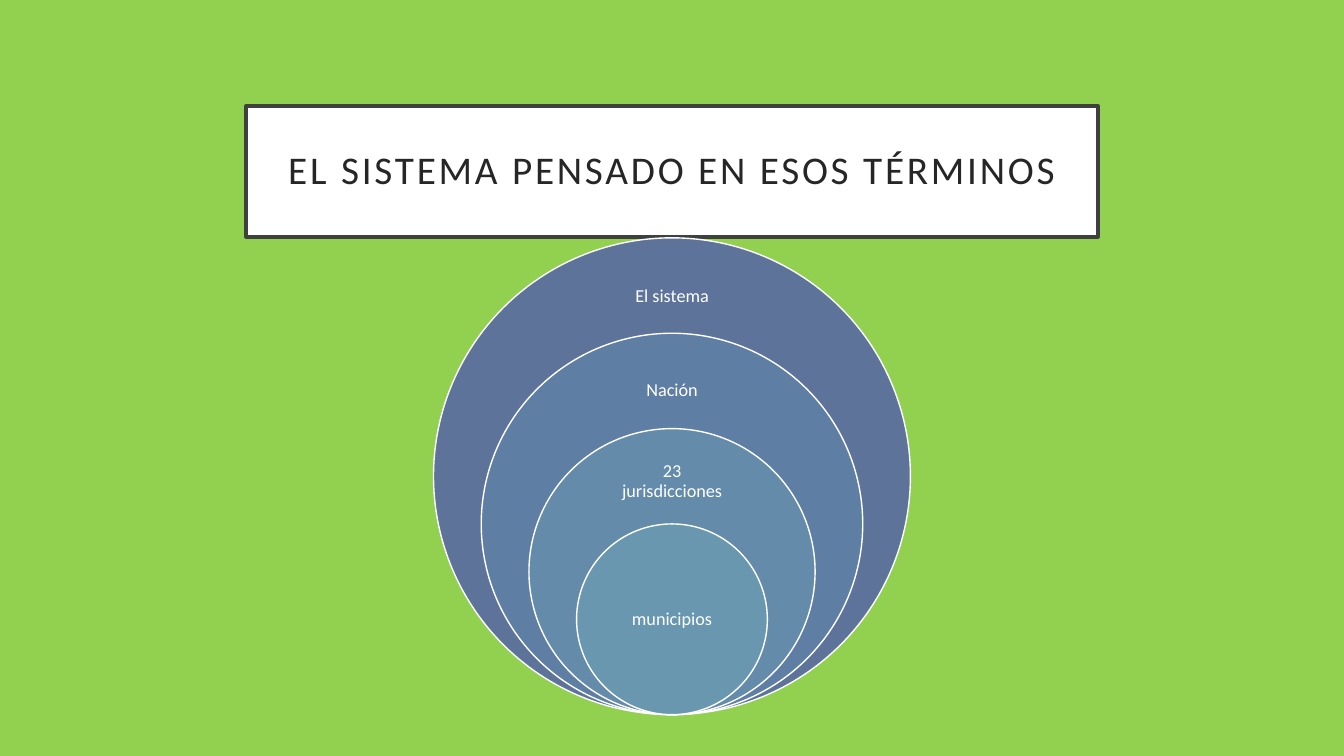
from pptx import Presentation
from pptx.dml.color import RGBColor
from pptx.enum.shapes import MSO_SHAPE
from pptx.enum.text import MSO_ANCHOR, PP_ALIGN
from pptx.util import Inches, Pt

COLORS = {
    "background": "92D050", "white": "FFFFFF", "frame": "404040", "title": "262626",
    "sistema": "5D739A", "nacion": "5F7EA3", "jurisdicciones": "648BA9",
    "municipios": "6997AF",
}
W, H = 13.33, 7.5


def rgb(name):
    return RGBColor.from_string(COLORS[name])


def write(sp, text, size, color, inset):
    tf = sp.text_frame
    tf.word_wrap = True
    tf.vertical_anchor = MSO_ANCHOR.MIDDLE
    tf.margin_left = tf.margin_right = tf.margin_top = tf.margin_bottom = Inches(inset)
    p = tf.paragraphs[0]
    p.alignment = PP_ALIGN.CENTER
    p.line_spacing = 0.9
    r = p.add_run()
    r.text = text
    p.font.size, p.font.name = Pt(size), "Calibri"
    p.font.color.rgb = rgb(color)
    return r


prs = Presentation()
prs.slide_width, prs.slide_height = Inches(W), Inches(H)
s = prs.slides.add_slide(prs.slide_layouts[6])
s.background.fill.solid()
s.background.fill.fore_color.rgb = rgb("background")

# Framed title
title_w = 8.45
sp = s.shapes.add_shape(MSO_SHAPE.RECTANGLE, Inches((W - title_w) / 2), Inches(1.05),
                        Inches(title_w), Inches(1.3))
sp.shadow.inherit = False
sp.fill.solid()
sp.fill.fore_color.rgb = rgb("white")
sp.line.color.rgb = rgb("frame")
sp.line.width = Pt(2.5)
r = write(sp, "EL SISTEMA PENSADO EN ESOS TÉRMINOS", 28, "title", 0.2)
r._r.get_or_add_rPr().set("spc", "200")  # letter spacing of 2 pt

# Nested circles share their lowest point; each is a fifth smaller than the first
outer, bottom = 4.73, 7.09
levels = [  # text, fill, label top, label width, label height
    ("El sistema", "sistema", 2.59, 1.32, 0.71),
    ("Nación", "nacion", 3.53, 1.32, 0.68),
    ("23 jurisdicciones", "jurisdicciones", 4.46, 1.32, 0.64),
    ("municipios", "municipios", 5.67, 1.34, 0.95),
]
for i, (text, fill, top, width, height) in enumerate(levels):
    d = outer * (1 - i / 5)
    sp = s.shapes.add_shape(MSO_SHAPE.OVAL, Inches((W - d) / 2), Inches(bottom - d),
                            Inches(d), Inches(d))
    sp.shadow.inherit = False
    sp.fill.solid()
    sp.fill.fore_color.rgb = rgb(fill)
    sp.line.color.rgb = rgb("white")
    sp.line.width = Pt(1)

    label = s.shapes.add_textbox(Inches((W - width) / 2), Inches(top),
                                 Inches(width), Inches(height))
    write(label, text, 13, "white", 0.1)

prs.save("out.pptx")
